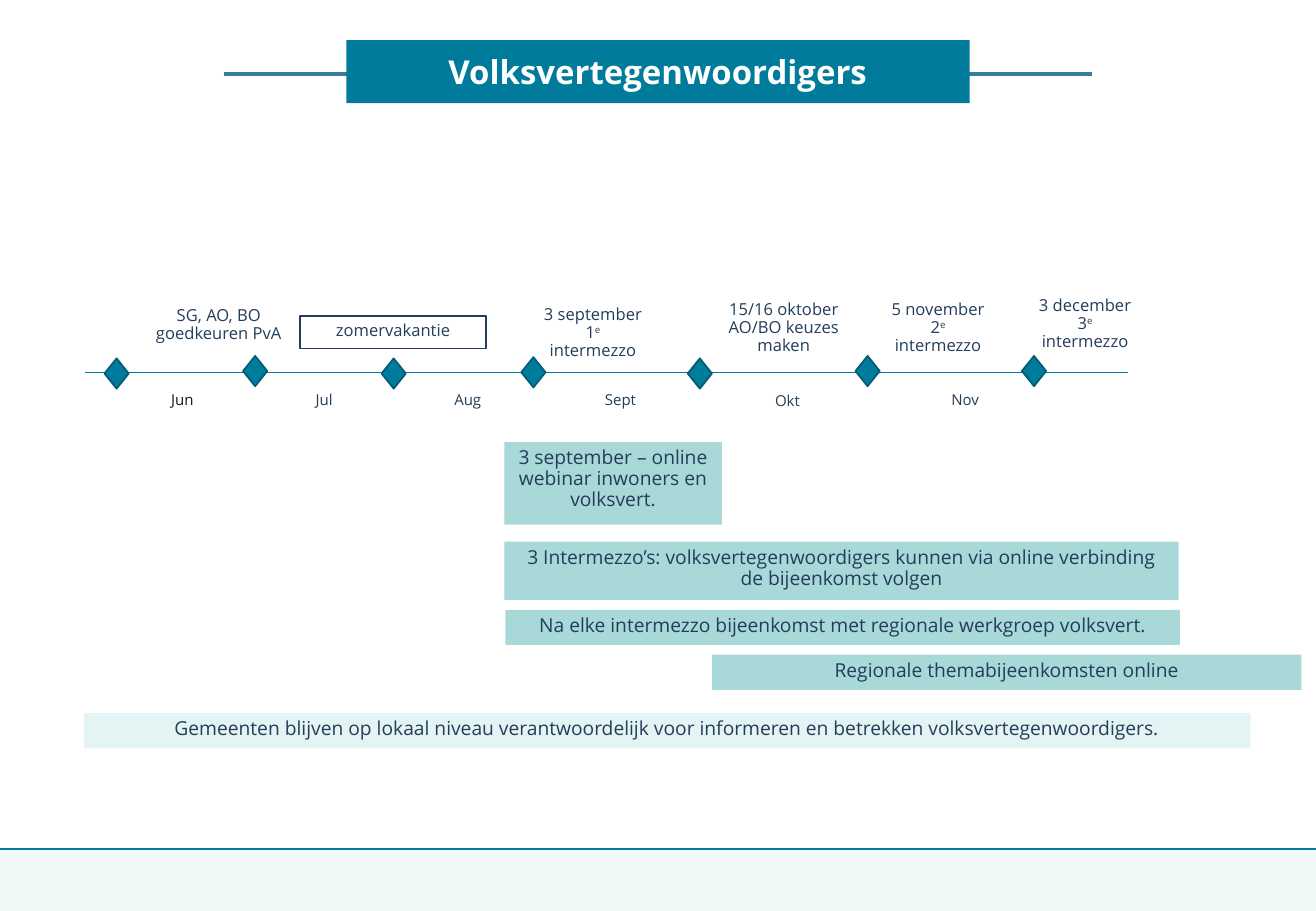
from lxml.etree import SubElement
from pptx import Presentation
from pptx.dml.color import RGBColor
from pptx.enum.shapes import MSO_CONNECTOR as Link, MSO_SHAPE as Form
from pptx.enum.text import MSO_ANCHOR as Anchor, PP_ALIGN as Align
from pptx.oxml.ns import qn
from pptx.util import Inches, Pt

TEAL, EDGE, NAVY = "007B9B", "005B73", "233D5A"
MINT, PALE, WHITE = "A8D8D8", "E4F3F3", "FFFFFF"


def color(code):
    return RGBColor.from_string(code)


class Page:
    font = "Open Sans"

    def __init__(self, slide):
        self.shapes = slide.shapes

    def line(self, x1, y1, x2, y2, tint, width):
        link = self.shapes.add_connector(
            Link.STRAIGHT, Inches(x1), Inches(y1), Inches(x2), Inches(y2))
        link.line.color.rgb = color(tint)
        link.line.width = Pt(width)
        SubElement(link._element.spPr, qn("a:effectLst"))

    def shape(self, form, x, y, w, h, fill, edge=None):
        item = self.shapes.add_shape(
            form, Inches(x), Inches(y), Inches(w), Inches(h))
        item.shadow.inherit = False
        item.fill.solid()
        item.fill.fore_color.rgb = color(fill)
        if edge:
            item.line.color.rgb = color(edge)
            item.line.width = Pt(1)
        else:
            item.line.fill.background()
        return item

    def text(self, item, words, size, tint=NAVY, align=Align.CENTER, bold=False):
        """Fill a shape; each ^ sets the next letter as superscript."""
        frame = item.text_frame
        frame.word_wrap = True
        frame.vertical_anchor = Anchor.TOP
        for i, row in enumerate(words.split("\n")):
            para = frame.paragraphs[0] if i == 0 else frame.add_paragraph()
            para.alignment = align
            para.line_spacing = 0.9
            para.font.name = self.font
            para.font.size = Pt(size)
            para.font.bold = bold
            para.font.color.rgb = color(tint)
            head, *tail = row.split("^")
            para.add_run().text = head
            for part in tail:
                sup = para.add_run()
                sup.text = part[0]
                sup._r.get_or_add_rPr().set("baseline", "30000")
                para.add_run().text = part[1:]
        return frame

    def label(self, x, y, w, h, words, size, **style):
        box = self.shapes.add_textbox(Inches(x), Inches(y), Inches(w), Inches(h))
        self.text(box, words, size, **style)

    def bar(self, x, y, w, h, words, fill=MINT, edge=None, size=11.4):
        self.text(self.shape(Form.RECTANGLE, x, y, w, h, fill, edge), words, size)


def main():
    deck = Presentation()
    deck.slide_width, deck.slide_height = Inches(10.83), Inches(7.5)
    page = Page(deck.slides.add_slide(deck.slide_layouts[6]))

    # Footer band, half transparent
    band = page.shape(Form.RECTANGLE, 0, 6.99, 10.83, 0.51, PALE)
    tone = band._element.spPr.find(qn("a:solidFill"))[0]
    SubElement(tone, qn("a:alpha")).set("val", "50000")
    page.line(10.83, 6.99, 0, 6.99, TEAL, 1)

    # Title
    page.line(1.84, 0.61, 8.99, 0.61, "387B9A", 2.25)
    title = page.shape(Form.ROUNDED_RECTANGLE, 2.85, 0.33, 5.13, 0.52, TEAL)
    title.adjustments[0] = 0
    frame = page.text(title, "Volksvertegenwoordigers", 19.5, WHITE, bold=True)
    frame.vertical_anchor = Anchor.MIDDLE
    frame.margin_left = frame.margin_right = frame.margin_bottom = 0
    frame.margin_top = Inches(0.03)

    # Timeline with month marks
    page.line(0.7, 3.07, 9.28, 3.07, TEAL, 0.5)
    for x, y in [(0.86, 2.95), (2, 2.93), (3.14, 2.95), (4.29, 2.94),
                 (5.66, 2.95), (7.04, 2.93), (8.41, 2.93)]:
        page.shape(Form.DIAMOND, x, y, 0.2, 0.25, TEAL, EDGE)
    for x, y, month in [(1.31, 3.18, "Jun"), (2.5, 3.18, "Jul"),
                        (3.64, 3.18, "Aug"), (4.88, 3.18, "Sept"),
                        (6.28, 3.19, "Okt"), (7.73, 3.18, "Nov")]:
        tint = "0E1A26" if month == "Jun" else NAVY
        page.label(x, y, 0.74 if month == "Sept" else 0.52, 0.25, month, 8.9,
                   tint=tint, align=Align.LEFT)

    # Events above the line
    page.bar(2.47, 2.6, 1.53, 0.27, "zomervakantie", WHITE, NAVY, 9.8)
    for x, y, w, h, words in [
            (1.14, 2.48, 1.32, 0.43, "SG, AO, BO goedkeuren PvA"),
            (4.36, 2.47, 1.04, 0.43, "3 september\n1^e intermezzo"),
            (5.86, 2.43, 1.18, 0.59, "15/16 oktober\nAO/BO keuzes maken"),
            (7.2, 2.43, 1.04, 0.43, "5 november\n2^e intermezzo"),
            (8.41, 2.4, 1.04, 0.43, "3 december\n3^e intermezzo")]:
        page.label(x, y, w, h, words, 9.8)

    # Activities below the line
    page.bar(4.15, 3.64, 1.79, 0.68,
             "3 september – online webinar inwoners en volksvert.")
    page.bar(4.15, 4.46, 5.55, 0.48,
             "3 Intermezzo’s: volksvertegenwoordigers kunnen via online "
             "verbinding de bijeenkomst volgen")
    page.bar(4.16, 5.02, 5.55, 0.29,
             "Na elke intermezzo bijeenkomst met regionale werkgroep volksvert.")
    page.bar(5.86, 5.39, 4.85, 0.29, "Regionale themabijeenkomsten online")
    page.bar(0.69, 5.87, 9.6, 0.29,
             "Gemeenten blijven op lokaal niveau verantwoordelijk voor "
             "informeren en betrekken volksvertegenwoordigers.", PALE)

    deck.save("out.pptx")


if __name__ == "__main__":
    main()
